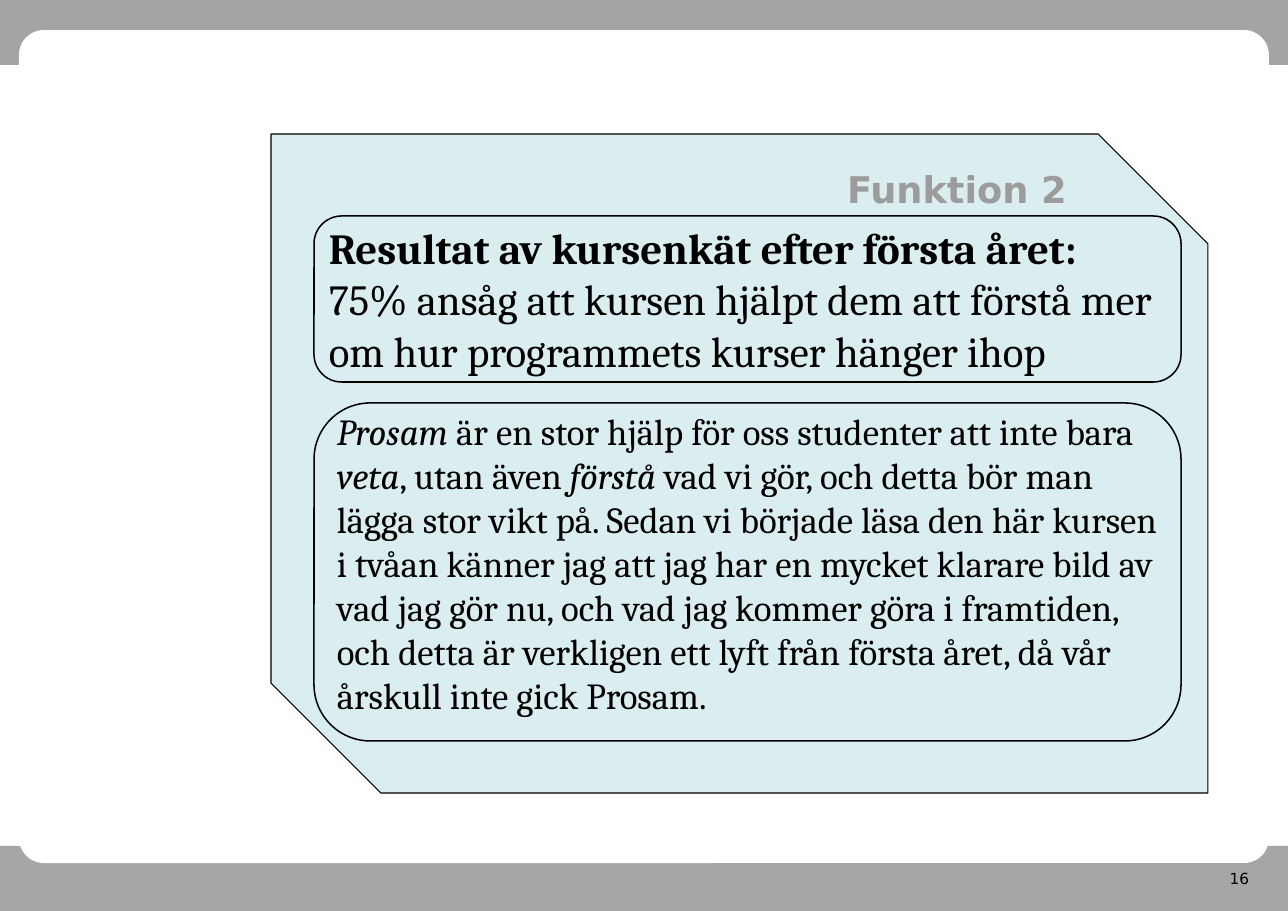
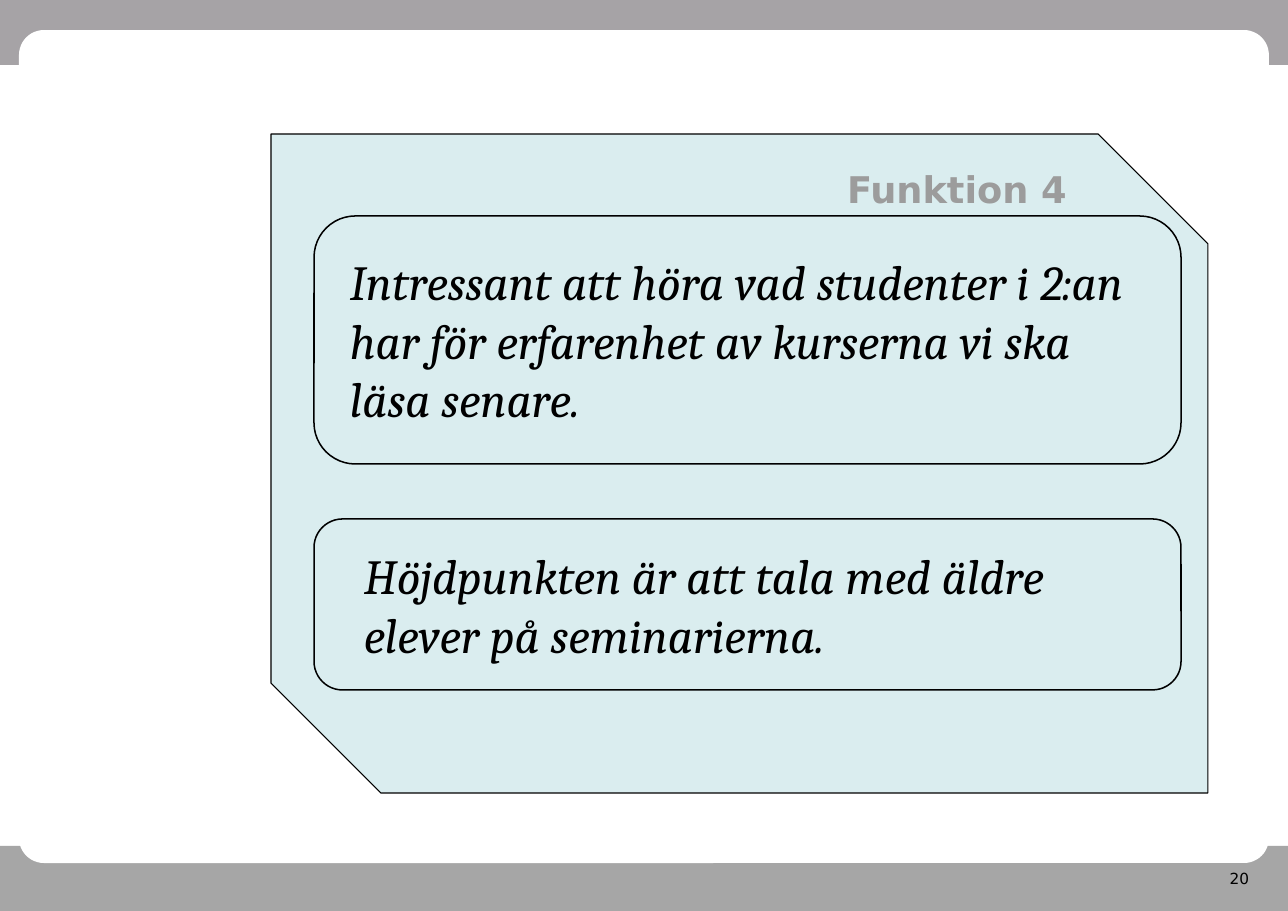
import pptx
import pptx.util
from pptx.dml.color import RGBColor
from pptx.enum.shapes import MSO_SHAPE
from pptx.enum.text import MSO_ANCHOR, MSO_AUTO_SIZE, PP_ALIGN

BLACK = RGBColor(0x00, 0x00, 0x00)
WHITE = RGBColor(0xFF, 0xFF, 0xFF)
TOP = RGBColor(0xA6, 0xA3, 0xA6)
FOOT = RGBColor(0xA6, 0xA6, 0xA6)
AQUA = RGBColor(0xDA, 0xED, 0xEF)
GREY = RGBColor(0x9C, 0x9C, 0x9C)

SERIF = "Cambria"
SANS = "DejaVu Sans"
SCALE = 8299
WIDE, HIGH = 1288, 911
BAND = 65
LEFT, SPAN = 314, 867

SLIDES = [
    {
        "title": "Funktion 2",
        "page": "16",
        "quotes": [
            {
                "frame": (216, 166),
                "text": (318, 216, 867, 166),
                "size": 28,
                "runs": [
                    ("Resultat av kursenkät efter första året:", "b"),
                    ("\n", ""),
                    ("75% ansåg att kursen hjälpt dem att förstå mer om hur "
                     "programmets kurser hänger ihop", ""),
                ],
            },
            {
                "frame": (403, 338),
                "text": (326, 403, 844, 323),
                "size": 24,
                "runs": [
                    ("Prosam ", "i"),
                    ("är en stor hjälp för oss studenter att inte bara ", ""),
                    ("veta", "i"),
                    (", utan även ", ""),
                    ("förstå ", "i"),
                    ("vad vi gör, och detta bör man lägga stor vikt på. Sedan vi "
                     "började läsa den här kursen i tvåan känner jag att jag har "
                     "en mycket klarare bild av vad jag gör nu, och vad jag kommer "
                     "göra i framtiden, och detta är verkligen ett lyft från "
                     "första året, då vår årskull inte gick Prosam.", ""),
                ],
            },
        ],
    },
    {
        "title": "Funktion 4",
        "page": "20",
        "quotes": [
            {
                "frame": (216, 248),
                "text": (339, 246, 830, 190),
                "size": 32,
                "runs": [
                    ("Intressant att höra vad studenter i 2:an har för "
                     "erfarenhet av kurserna vi ska läsa senare.", "i"),
                ],
            },
            {
                "frame": (519, 171),
                "text": (353, 540, 817, 130),
                "size": 32,
                "runs": [
                    ("Höjdpunkten är att tala med äldre elever på "
                     "seminarierna.", "i"),
                ],
            },
        ],
    },
]

BACK = [
    (MSO_SHAPE.RECTANGLE, (0, 0, WIDE, BAND), TOP, 0),
    (MSO_SHAPE.RECTANGLE, (0, HIGH - BAND, WIDE, BAND), FOOT, 0),
    (MSO_SHAPE.ROUNDED_RECTANGLE, (19, 30, 1250, 833), WHITE, 0),
    (MSO_SHAPE.SNIP_2_DIAG_RECTANGLE, (271, 134, 937, 659), AQUA, 0.75),
]


def emu(box):
    return [n * SCALE for n in box]


def style(font, name, size, color):
    font.name = name
    font.size = pptx.util.Pt(size)
    font.color.rgb = color


def draw(slide, kind, box, fill=None, line=0):
    shape = slide.shapes.add_shape(kind, *emu(box))
    shape.shadow.inherit = False
    if fill is None:
        shape.fill.background()
    else:
        shape.fill.solid()
        shape.fill.fore_color.rgb = fill
    if line:
        shape.line.color.rgb = BLACK
        shape.line.width = pptx.util.Pt(line)
    else:
        shape.line.fill.background()
    return shape


def write(slide, box):
    frame = slide.shapes.add_textbox(*emu(box)).text_frame
    frame.word_wrap = True
    return frame


def dress(layout, slide):
    for spot, (kind, box, fill, line) in enumerate(BACK, 2):
        shape = draw(slide, kind, box, fill, line)
        if kind == MSO_SHAPE.ROUNDED_RECTANGLE:
            shape.adjustments[0] = 0.03
        layout.shapes.element.insert(spot, shape.element)


def head(slide, text):
    title = slide.shapes.title
    title.left, title.top, title.width, title.height = emu((836, 161, 269, 55))
    frame = title.text_frame
    frame.text = text
    frame.auto_size = MSO_AUTO_SIZE.NONE
    frame.vertical_anchor = MSO_ANCHOR.TOP
    para = frame.paragraphs[0]
    para.alignment = PP_ALIGN.LEFT
    style(para.font, SANS, 24, GREY)
    para.font.bold = True


def number(slide, text):
    frame = write(slide, (992, 863, 269, 33))
    frame.margin_left = frame.margin_right = 12 * SCALE
    frame.margin_top = frame.margin_bottom = 6 * SCALE
    para = frame.paragraphs[0]
    para.text = text
    para.alignment = PP_ALIGN.RIGHT
    style(para.font, SANS, 10, BLACK)


def quote(slide, item):
    para = write(slide, item["text"]).paragraphs[0]
    style(para.font, SERIF, item["size"], BLACK)
    for text, mark in item["runs"]:
        if text == "\n":
            para.add_line_break()
            continue
        run = para.add_run()
        run.text = text
        style(run.font, SERIF, item["size"], BLACK)
        run.font.bold = mark == "b"
        run.font.italic = mark == "i"
    top, tall = item["frame"]
    draw(slide, MSO_SHAPE.ROUNDED_RECTANGLE, (LEFT, top, SPAN, tall), line=1)


def main():
    deck = pptx.Presentation()
    deck.slide_width, deck.slide_height = emu((WIDE, HIGH))
    layout = deck.slide_layouts[5]
    for place, data in enumerate(SLIDES):
        slide = deck.slides.add_slide(layout)
        if place == 0:
            dress(layout, slide)
        head(slide, data["title"])
        number(slide, data["page"])
        for item in data["quotes"]:
            quote(slide, item)
    deck.save("out.pptx")


if __name__ == "__main__":
    main()
